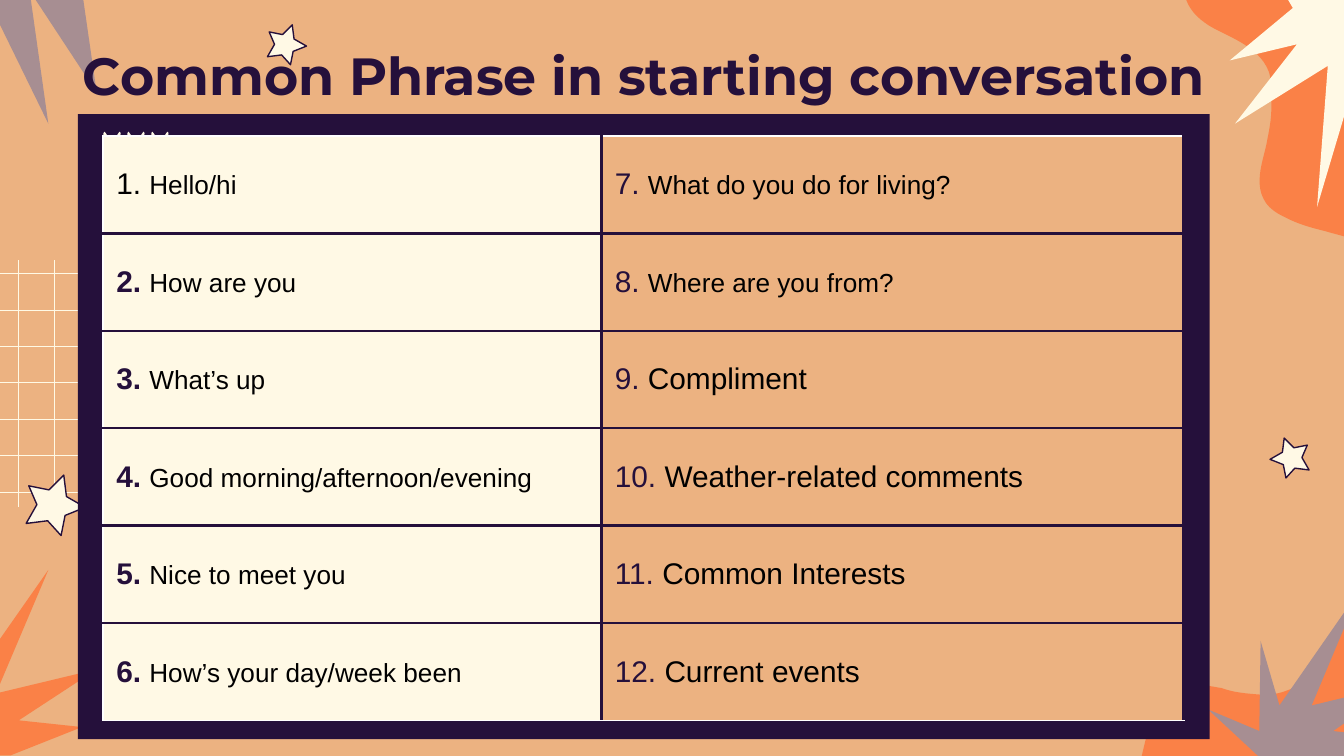
from dataclasses import dataclass
from pptx import Presentation
from pptx import util as u
from pptx.dml.color import RGBColor
from pptx.enum import shapes, text
from pptx.oxml import parse_xml
from pptx.oxml.ns import nsdecls


@dataclass(frozen=True)
class Theme:
    sand: str = "ECB281"
    cream: str = "FFF9E5"
    plum: str = "25103B"
    coral: str = "FA8147"
    mauve: str = "A78E92"
    black: str = "000000"
    head: str = "Montserrat"
    body: str = "Arial"
    big: int = 28
    mid: int = 16
    small: int = 14
    thin: float = 0.4
    edge: float = 0.75
    rule: float = 1.5


LOOK = Theme()
COLS, ROWS = 100, 56.25
CELL = u.Inches(10) / COLS

STAR = [(2.8, 0), (3, 1.6), (4.4, 2.4), (2.9, 3), (2.6, 4.5),
        (1.6, 3.4), (0, 3.6), (0.8, 2.2), (0.2, 0.8), (1.7, 1.1)]
CROSS = [(0, 0.1), (0.08, 0), (0.16, 0.1), (0.64, 0.8), (1.12, 0.1), (1.2, 0),
         (1.28, 0.1), (1.25, 0.3), (0.8, 1), (1.28, 1.8), (1.2, 2.05), (0.64, 1.2),
         (0.08, 2.05), (0, 1.8), (0.5, 1), (0, 0.3)]

HILL = [(100.9, 45.9), (99.6, 46.1, 98.8, 47.3, 98.3, 48.4),
        (97.7, 49.6, 97.1, 51, 95.7, 51.4), (95.2, 51.6, 94.6, 51.7, 94, 51.7),
        (92.5, 51.6, 91.7, 51.5, 90.9, 51.2), (90.2, 51.1, 89.4, 50.9, 88.6, 50.9),
        (88.1, 50.9, 87.6, 51, 87.1, 51.3), (86.5, 51.7, 86.2, 52.4, 86, 53),
        (85.7, 53.7, 85.4, 54.4, 85.2, 55.2), (84.7, 57.3), (100.9, 57.3)]
WAVE = [(88.1, -0.7), (88.3, 0.9, 89.6, 1.8, 90.9, 2.4),
        (92.3, 3.1, 93.8, 3.8, 94.4, 5.3), (94.7, 6.2, 94.6, 7.1, 94.6, 8),
        (94.6, 9, 94.4, 9.9, 94.2, 10.9), (93.9, 12.2, 93.3, 13.8, 94.2, 15.1),
        (94.7, 15.8, 95.5, 16.1, 96.1, 16.4), (97, 16.8, 97.8, 17, 98.6, 17.2),
        (99.6, 17.5, 100.6, 17.7, 101.5, 18.1), (101.5, -0.7)]
FLAME = [(3.6, 42.4), (-2, 50.4), (-2, 56.2), (0.8, 56.2), (6.1, 54.1),
         (1.4, 53.6), (7.2, 49.8), (-0.3, 51.6)]
BURST = [(100.9, 44.3), (95.2, 52.5), (93.8, 47.7), (93.7, 54.4), (89.9, 52.8),
         (94.2, 56.8), (93.5, 57.3), (98.7, 57.3), (98.6, 56.8), (100.9, 55.9),
         (100.9, 54.6), (99.2, 54.4), (100.9, 53.2), (100.9, 51.7), (97.6, 52.5),
         (100.9, 44.6)]
FLASH = [(95.5, -0.6), (96.2, 0.6), (91.5, 4.5), (96.5, 3.3), (91.9, 9.2),
         (98.8, 4.9), (98, 15.4), (101.4, 4), (101.5, 4.1), (101.5, -0.6)]
SPIKE = [(-2.8, -2.8), (-2.8, 12.3), (-2.5, 14.6), (-1, -0.2), (3.6, 9.2),
         (2.2, -0.7), (7.2, 6.9), (5.8, -2.8)]

LEFT = ["Hello/hi", "How are you", "What’s up", "Good morning/afternoon/evening",
        "Nice to meet you", "How’s your day/week been"]
RIGHT = ["What do you do for living?", "Where are you from?", "Compliment",
         "Weather-related comments", "Common Interests", "Current events"]


def size(n):
    return u.Emu(round(n * CELL))


def tint(name):
    return RGBColor.from_string(name)


def trace(path, steps=12):
    dots = []
    for part in path:
        if len(part) == 2:
            dots.append(part)
            continue
        knots = [dots[-1], part[:2], part[2:4], part[4:]]
        for i in range(1, steps + 1):
            t = i / steps
            mix = ((1 - t) ** 3, 3 * t * (1 - t) ** 2, 3 * t * t * (1 - t), t ** 3)
            dots.append(tuple(sum(m * k[a] for m, k in zip(mix, knots)) for a in (0, 1)))
    return [(size(x), size(y)) for x, y in dots]


def paint(shape, fill, line=None):
    shape.shadow.inherit = False
    shape.fill.solid()
    shape.fill.fore_color.rgb = tint(fill)
    if line:
        shape.line.color.rgb = tint(line)
        shape.line.width = u.Pt(LOOK.edge)
    else:
        shape.line.fill.background()


def blob(slide, path, fill, line=None):
    dots = trace(path)
    pen = slide.shapes.build_freeform(*dots[0])
    pen.add_line_segments(dots[1:], close=True)
    paint(pen.convert_to_shape(), fill, line)


def star(slide, x, y, zoom=1, flip=False):
    path = [(x + zoom * (4.4 - a if flip else a), y + zoom * b) for a, b in STAR]
    blob(slide, path, LOOK.cream, LOOK.plum)


def wire(slide, x1, y1, x2, y2):
    line = slide.shapes.add_connector(
        shapes.MSO_CONNECTOR.STRAIGHT, size(x1), size(y1), size(x2), size(y2))
    line.line.color.rgb = tint(LOOK.cream)
    line.line.width = u.Pt(LOOK.thin)
    line._element.spPr.append(parse_xml(f"<a:effectLst {nsdecls('a')}/>"))


def mesh(slide):
    for i in range(2):
        x = 1.4 + 2.65 * i
        wire(slide, x, 19.35, x, 37.7)
    for i in range(7):
        y = 20.35 + 2.71 * i
        wire(slide, -10.4, y, 7.8, y)


def decor(slide):
    mesh(slide)
    for path, fill in ((HILL, LOOK.coral), (WAVE, LOOK.coral), (FLAME, LOOK.coral),
                       (BURST, LOOK.mauve), (FLASH, LOOK.cream), (SPIKE, LOOK.mauve)):
        blob(slide, path, fill)
    star(slide, 94.5, 32.6, 0.66, True)
    star(slide, 19.9, 1.85, 0.66)
    star(slide, 1.95, 35.35)


def title(slide, words):
    box = slide.shapes.title
    slide.shapes._spTree.append(box._element)
    box.left, box.top, box.width, box.height = map(size, (2.5, 2.2, 90.8, 6.3))
    frame = box.text_frame
    frame.text = words
    frame.word_wrap = True
    frame.auto_size = text.MSO_AUTO_SIZE.NONE
    frame.vertical_anchor = text.MSO_ANCHOR.TOP
    frame.margin_left = frame.margin_right = size(1)
    frame.margin_top = frame.margin_bottom = size(1)
    para = frame.paragraphs[0]
    para.alignment = text.PP_ALIGN.CENTER
    style(para.runs[0], LOOK.big, LOOK.plum, LOOK.head, True)


def style(run, pts, color, font, bold=False):
    run.font.size = u.Pt(pts)
    run.font.color.rgb = tint(color)
    run.font.name = font
    run.font.bold = bold


def panel(slide):
    box = slide.shapes.add_shape(
        shapes.MSO_SHAPE.RECTANGLE, *map(size, (5.8, 8.5, 84.2, 46.5)))
    paint(box, LOOK.plum)
    for i in range(3):
        blob(slide, [(7.7 + 1.78 * i + x, 9.8 + y) for x, y in CROSS], LOOK.cream)


def rules(cell, sides):
    props = cell._tc.get_or_add_tcPr()
    for side in sides:
        props.append(parse_xml(
            f'<a:ln{side} {nsdecls("a")} w="{u.Pt(LOOK.rule)}"><a:solidFill>'
            f'<a:srgbClr val="{LOOK.plum}"/></a:solidFill></a:ln{side}>'))


def fill_in(cell, num, words, back):
    cell.fill.solid()
    cell.fill.fore_color.rgb = tint(back)
    cell.vertical_anchor = text.MSO_ANCHOR.MIDDLE
    cell.margin_left = cell.margin_right = size(1)
    cell.margin_top = cell.margin_bottom = 0
    para = cell.text_frame.paragraphs[0]
    mark, note = para.add_run(), para.add_run()
    mark.text, note.text = f"{num}. ", words
    style(mark, LOOK.mid, LOOK.black if num == 1 else LOOK.plum, LOOK.body, 1 < num < 7)
    style(note, LOOK.small if num < 9 else LOOK.mid, LOOK.black, LOOK.body)


def phrases(slide):
    last = len(LEFT) - 1
    frame = slide.shapes.add_table(len(LEFT), 2, *map(size, (7.65, 10.12, 80.4, 43.5)))
    grid = frame.table
    grid.first_row = grid.horz_banding = False
    grid.columns[0].width, grid.columns[1].width = size(37.1), size(43.3)
    for col, (words, back) in enumerate(((LEFT, LOOK.cream), (RIGHT, LOOK.sand))):
        for row, item in enumerate(words):
            cell = grid.cell(row, col)
            sides = ("L" if col else "") + "R"
            sides += ("T" if row else "") + ("B" if row < last else "")
            rules(cell, sides)
            fill_in(cell, col * len(LEFT) + row + 1, item, back)


def main():
    deck = Presentation()
    deck.slide_width, deck.slide_height = size(COLS), size(ROWS)
    slide = deck.slides.add_slide(deck.slide_layouts[5])
    slide.background.fill.solid()
    slide.background.fill.fore_color.rgb = tint(LOOK.sand)
    decor(slide)
    title(slide, "Common Phrase in starting conversation")
    panel(slide)
    phrases(slide)
    deck.save("out.pptx")


if __name__ == "__main__":
    main()
